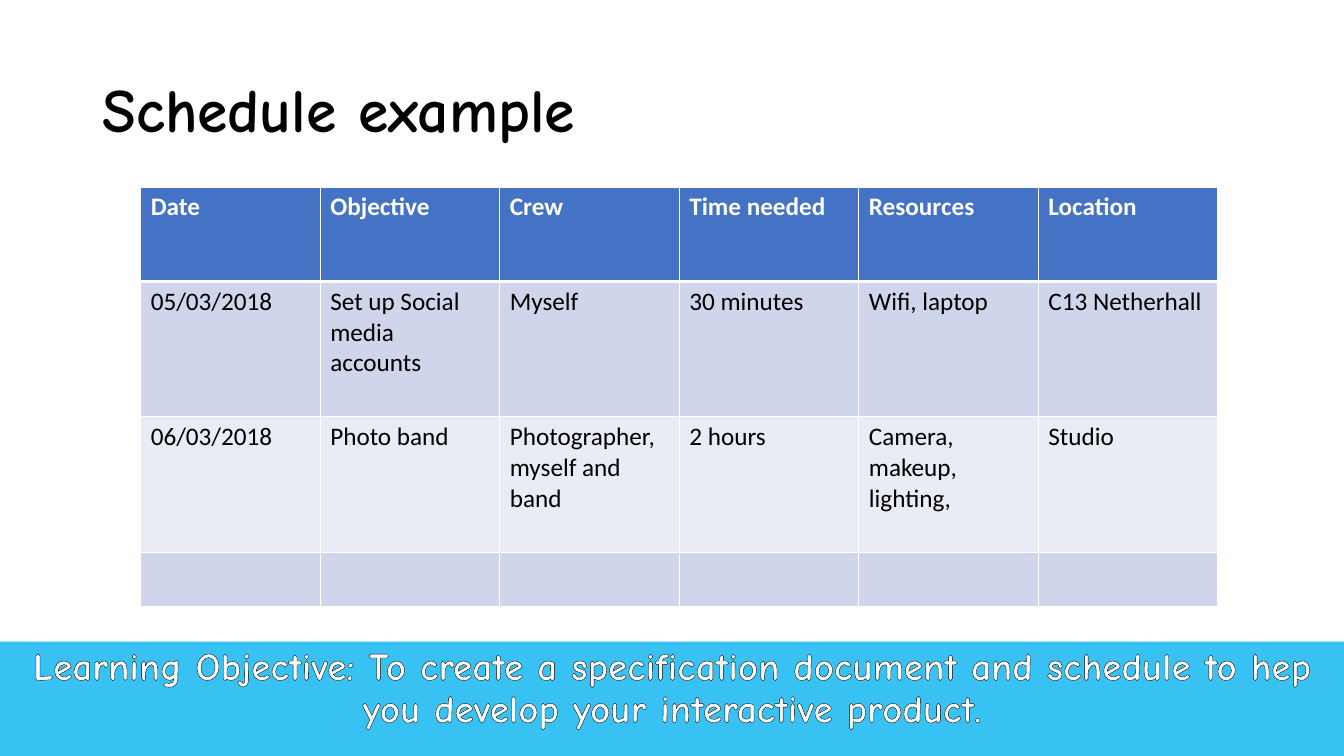
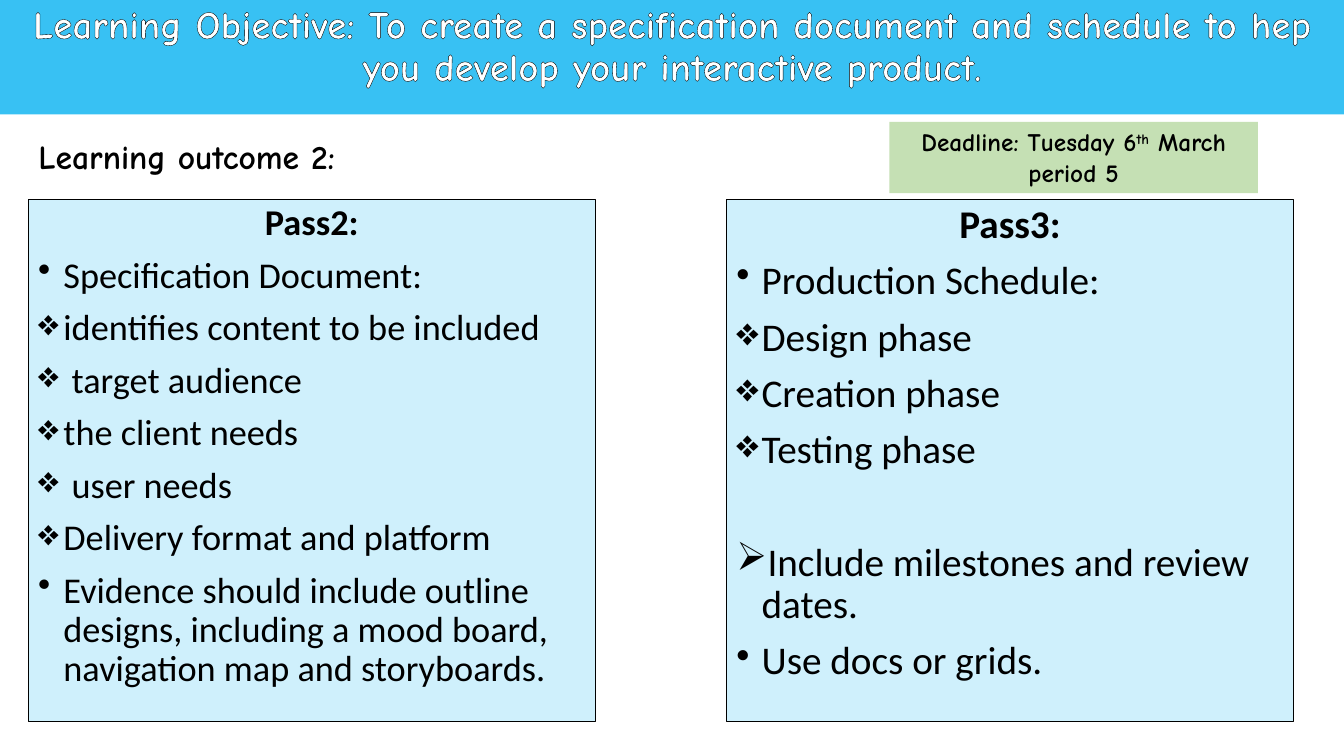
from dataclasses import dataclass

import pptx
import pptx.dml.color
import pptx.enum.shapes
import pptx.enum.text
import pptx.oxml
import pptx.oxml.ns
import pptx.util
from lxml import etree

ALIGN = pptx.enum.text.PP_ALIGN
ANCHOR = pptx.enum.text.MSO_ANCHOR
EMU_PER_PX = 9525
SLIDE_W, SLIDE_H = 1280, 720
BAND_H = 109
BOX_TOP, BOX_W, BOX_H = 190, 540, 497


@dataclass(frozen=True)
class Theme:
    black: str = "000000"
    white: str = "FFFFFF"
    sky: str = "00B0F0"
    green: str = "C5E0B4"
    header: str = "4472C4"
    stripes: tuple = ("CFD5EA", "E9EBF5")
    display: str = "Comic Neue"
    body: str = "Calibri"
    title: float = 44
    band: float = 28
    subtitle: float = 24
    small: float = 18
    criteria: float = 28
    criteria_tight: float = 25.9
    band_alpha: int = 78
    box_alpha: int = 19


T = Theme()
OBJECTIVE = ("Learning Objective: To create a specification document and schedule "
             "to hep you develop your interactive product.")
SCHEDULE = (
    ("Date", "Objective", "Crew", "Time needed", "Resources", "Location"),
    ("05/03/2018", "Set up Social media accounts", "Myself", "30 minutes",
     "Wifi, laptop", "C13 Netherhall"),
    ("06/03/2018", "Photo band", "Photographer, myself and band", "2 hours",
     "Camera, makeup, lighting,", "Studio"),
    ("",) * 6,
)
ROW_HEIGHTS = (90, 129, 129, 52)
COL_WIDTH = 171
PASS2 = (
    ("•", "Specification Document:"),
    ("❖", "identifies content to be included"),
    ("❖", " target audience"),
    ("❖", "the client needs"),
    ("❖", " user needs"),
    ("❖", "Delivery format and platform"),
    ("•", "Evidence should include outline designs, including a mood board, "
          "navigation map and storyboards."),
)
PASS3 = (
    ("•", "Production Schedule:"),
    ("❖", "Design phase"),
    ("❖", "Creation phase"),
    ("❖", "Testing phase"),
    ("➢", "Include milestones and review dates."),
    ("•", "Use docs or grids."),
)


def px(n):
    return pptx.util.Emu(n * EMU_PER_PX)


def rgb(color):
    return pptx.dml.color.RGBColor.from_string(color)


def add_run(p, text, size, color=T.black, font=T.display, bold=True):
    r = p.add_run()
    r.text = text
    r.font.name = font
    r.font.size = pptx.util.Pt(size)
    r.font.bold = bold
    r.font.color.rgb = rgb(color)
    return r


def line_xml(tag, color, width):
    return pptx.oxml.parse_xml(
        f'<a:{tag} {pptx.oxml.ns.nsdecls("a")} w="{int(width * 12700)}">'
        f'<a:solidFill><a:srgbClr val="{color}"/></a:solidFill></a:{tag}>')


def add_rect(s, at, fill, alpha=100, line=None):
    sp = s.shapes.add_shape(pptx.enum.shapes.MSO_SHAPE.RECTANGLE, *map(px, at))
    sp.shadow.inherit = False
    sp.fill.solid()
    sp.fill.fore_color.rgb = rgb(fill)
    if alpha < 100:
        clr = sp.fill._xPr.find(".//" + pptx.oxml.ns.qn("a:srgbClr"))
        etree.SubElement(clr, pptx.oxml.ns.qn("a:alpha"), val=str(alpha * 1000))
    if line:
        sp.line.color.rgb = rgb(line)
        sp.line.width = pptx.util.Pt(0.75)
    else:
        sp.line.fill.background()
    tf = sp.text_frame
    tf.word_wrap = True
    tf.vertical_anchor = ANCHOR.TOP
    return tf


def set_title(s, text, at, size):
    sp = s.shapes.title
    sp.left, sp.top, sp.width, sp.height = map(px, at)
    tf = sp.text_frame
    tf.auto_size = pptx.enum.text.MSO_AUTO_SIZE.NONE
    tf.word_wrap = True
    tf.vertical_anchor = ANCHOR.MIDDLE
    p = tf.paragraphs[0]
    p.alignment = ALIGN.LEFT
    p.line_spacing = 0.9
    add_run(p, text, size)


def add_objective_band(s, top):
    tf = add_rect(s, (0, top, SLIDE_W, BAND_H), T.sky, T.band_alpha)
    p = tf.paragraphs[0]
    p.alignment = ALIGN.CENTER
    p.line_spacing = 0.9
    r = add_run(p, OBJECTIVE, T.band, T.white)
    r.font._element.insert(0, line_xml("ln", T.black, 0.75))


def style_cell(cell, text, row):
    is_header = row == 0
    cell.fill.solid()
    cell.fill.fore_color.rgb = rgb(T.header if is_header else T.stripes[(row - 1) % 2])
    widths = {"lnL": 1, "lnR": 1, "lnT": 3 if row == 1 else 1, "lnB": 3 if is_header else 1}
    tc_pr = cell._tc.get_or_add_tcPr()
    for i, (tag, width) in enumerate(widths.items()):
        tc_pr.insert(i, line_xml(tag, T.white, width))
    if text:
        add_run(cell.text_frame.paragraphs[0], text, T.small,
                T.white if is_header else T.black, T.body, is_header)


def add_schedule(s, left, top):
    cols = len(SCHEDULE[0])
    table = s.shapes.add_table(len(SCHEDULE), cols, px(left), px(top),
                               px(COL_WIDTH * cols), px(sum(ROW_HEIGHTS))).table
    for col in table.columns:
        col.width = px(COL_WIDTH)
    for i, (texts, height) in enumerate(zip(SCHEDULE, ROW_HEIGHTS)):
        table.rows[i].height = px(height)
        for j, text in enumerate(texts):
            style_cell(table.cell(i, j), text, i)


def add_bullet(p, char):
    p_pr = p._p.get_or_add_pPr()
    p_pr.set("marL", str(px(24)))
    p_pr.set("indent", str(px(-24)))
    etree.SubElement(p_pr, pptx.oxml.ns.qn("a:buChar"), char=char)


def add_criteria(s, left, heading, items, size, gap):
    tf = add_rect(s, (left, BOX_TOP, BOX_W, BOX_H), T.sky, T.box_alpha, T.black)
    p = tf.paragraphs[0]
    p.line_spacing = 0.9
    add_run(p, heading, size, font=T.body)
    for char, text in items:
        p = tf.add_paragraph()
        add_bullet(p, char)
        p.line_spacing = 0.9
        p.space_before = pptx.util.Pt(50 if char == "➢" else gap)
        add_run(p, text, size, font=T.body, bold=False)


def add_deadline(s, at):
    p = add_rect(s, at, T.green).paragraphs[0]
    p.alignment = ALIGN.CENTER
    add_run(p, "Deadline: Tuesday 6", T.small)
    r = add_run(p, "th", T.small)
    r.font._element.set("baseline", "30000")
    add_run(p, " March period 5", T.small)


def main():
    prs = pptx.Presentation()
    prs.slide_width, prs.slide_height = px(SLIDE_W), px(SLIDE_H)
    title_only = prs.slide_layouts[5]

    s = prs.slides.add_slide(title_only)
    set_title(s, "Schedule example", (88, 38, 1104, 139), T.title)
    add_schedule(s, 134, 178)
    add_objective_band(s, SLIDE_H - BAND_H)

    s = prs.slides.add_slide(title_only)
    set_title(s, "Learning outcome 2:", (27, 127, 331, 48), T.subtitle)
    add_objective_band(s, 0)
    add_criteria(s, 27, "Pass2:", PASS2, T.criteria_tight, 9.5)
    add_criteria(s, 692, "Pass3:", PASS3, T.criteria, 10)
    add_deadline(s, (847, 116, 351, 68))

    prs.save("out.pptx")


if __name__ == "__main__":
    main()
